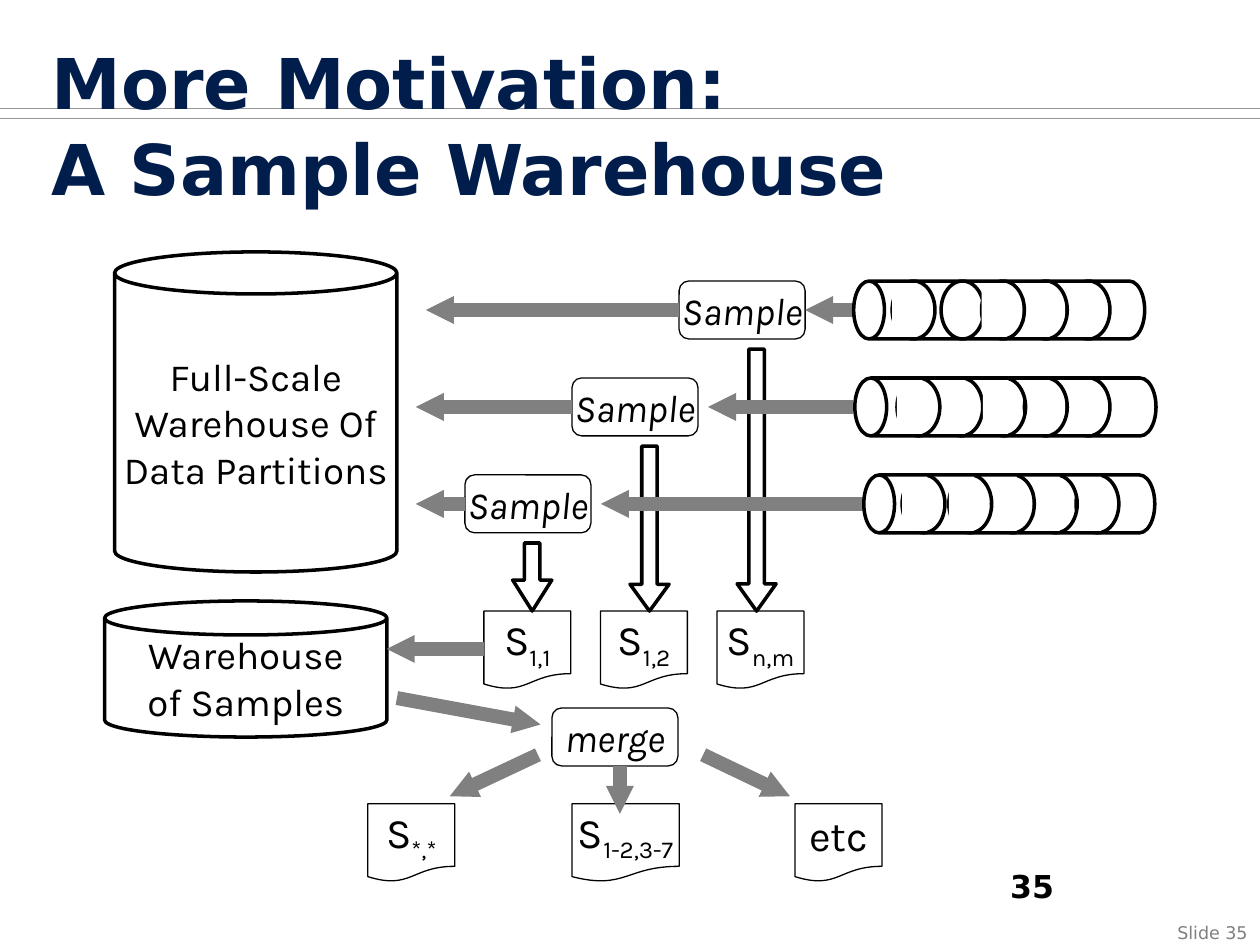
from lxml import etree
from pptx import Presentation
from pptx.dml.color import RGBColor
from pptx.enum.shapes import MSO_CONNECTOR, MSO_SHAPE
from pptx.enum.text import MSO_ANCHOR, PP_ALIGN
from pptx.oxml.ns import qn
from pptx.util import Pt

BLACK, GREY, WHITE = "000000", "808080", "FFFFFF"
BOX_W, BOX_H = 72, 33.1
DOC_W, DOC_H = 49.7, 44.6
ROW_PITCH = 55.4
DOC_TOP = 349.2
DISC_W, MASK_W = 24.5, 14.4


def color(hex_value):
    return RGBColor.from_string(hex_value)


def write(shape, text, sub="", size=22, font="Karla", ink=BLACK, bold=False,
          italic=False, align=PP_ALIGN.CENTER, anchor=MSO_ANCHOR.MIDDLE,
          wrap=False, spacing=None):
    """Fill a shape with one paragraph per line; sub is a closing subscript."""
    frame = shape.text_frame
    frame.word_wrap = wrap
    frame.vertical_anchor = anchor
    for i, line in enumerate(text.split("\n")):
        paragraph = frame.paragraphs[0] if i == 0 else frame.add_paragraph()
        paragraph.alignment = align
        paragraph.line_spacing = spacing
        for part in filter(None, (line, sub)):
            run = paragraph.add_run()
            run.text = part
            run.font.size = Pt(size)
            run.font.name = font
            run.font.bold = bold
            run.font.italic = italic
            run.font.color.rgb = color(ink)
            if part == sub:
                run._r.get_or_add_rPr().set("baseline", "-25000")


def add_label(slide, box, text, **style):
    label = slide.shapes.add_textbox(*map(Pt, box))
    write(label, text, font="DejaVu Sans", anchor=MSO_ANCHOR.TOP, **style)


def add_outline(slide, kind, box, weight=2, fill=None, adjust=(), rotation=0):
    """Add a black-outlined preset shape; weight 0 leaves the outline off."""
    shape = slide.shapes.add_shape(kind, *map(Pt, box))
    shape.shadow.inherit = False
    shape.rotation = rotation
    for i, value in enumerate(adjust):
        shape.adjustments[i] = value
    if fill:
        shape.fill.solid()
        shape.fill.fore_color.rgb = color(fill)
    else:
        shape.fill.background()
    if weight:
        shape.line.color.rgb = color(BLACK)
        shape.line.width = Pt(weight)
    else:
        shape.line.fill.background()
    return shape


def add_line(slide, start, end, ink=GREY, weight=8, arrow=True):
    line = slide.shapes.add_connector(MSO_CONNECTOR.STRAIGHT, *map(Pt, start + end))
    line.line.color.rgb = color(ink)
    line.line.width = Pt(weight)
    if arrow:
        etree.SubElement(line.line._get_or_add_ln(), qn("a:tailEnd"),
                         type="triangle", w="sm", len="sm")
    etree.SubElement(line._element.spPr, qn("a:effectLst"))


def add_step(slide, left, top, text):
    step = add_outline(slide, MSO_SHAPE.ROUNDED_RECTANGLE,
                       (left, top, BOX_W, BOX_H), weight=0.75)
    write(step, text, italic=True)


def add_document(slide, left, top, text, sub="", width=DOC_W):
    document = add_outline(slide, MSO_SHAPE.FLOWCHART_DOCUMENT,
                           (left, top, width, DOC_H), weight=0.75)
    write(document, text, sub, size=24)


def add_warehouse(slide, box, text, lid):
    write(add_outline(slide, MSO_SHAPE.CAN, box, adjust=[lid]), text)


def add_stream(slide, left, top, length, cap, discs, whole_disc=None):
    """Lying cylinder cut by discs, each half hidden except whole_disc."""
    for disc in discs:
        add_outline(slide, MSO_SHAPE.OVAL, (disc, top, DISC_W, BOX_H))
        if disc != whole_disc:
            add_outline(slide, MSO_SHAPE.RECTANGLE, (disc, top, MASK_W, BOX_H),
                        weight=0, fill=WHITE)
    upright = (left + (length - BOX_H) / 2, top + (BOX_H - length) / 2, BOX_H, length)
    add_outline(slide, MSO_SHAPE.CAN, upright, adjust=[cap], rotation=270)


def add_heading(slide, box):
    for y in (67.7, 61.9):
        add_line(slide, (0, y), (720, y), ink="969696", weight=0.5, arrow=False)
    add_label(slide, box, "More Motivation:\nA Sample Warehouse", size=40,
              ink="001D4B", bold=True, align=PP_ALIGN.LEFT, wrap=True, spacing=1.03)


def add_sampling(slide, left, top):
    """Rows of stream, sample step and warehouse arrow, with documents below."""
    # stream start, arrow end at the sample, arrow end at the warehouse,
    # down arrow left and head, document subscript
    rows = [(487.4, 460.1, 243.4, 421.2, 0.699, "n,m"),
            (487.4, 404.6, 237.6, 360, 0.687, "1,2"),
            (493.2, 343.4, 237.6, 293, 0.792, "1,1")]
    for i, (source, arrival, store, down, head, sub) in enumerate(rows):
        row_top = top + i * ROW_PITCH
        middle = row_top + BOX_H / 2
        step_left = left - i * 61.2
        down_top = row_top + BOX_H + 5.8
        add_outline(slide, MSO_SHAPE.DOWN_ARROW,
                    (down, down_top, 22.3, DOC_TOP - down_top), adjust=[0.396, head])
        add_step(slide, step_left, row_top, "Sample")
        add_line(slide, (source, middle), (arrival, middle))
        add_line(slide, (step_left, middle), (store, middle))
        add_document(slide, 409.7 - i * 66.6, DOC_TOP, "S", sub)


def add_streams(slide, top):
    streams = [(487.8, 166.3, 0.531, [537.8, 509.8, 609.8, 585.4, 560.9], 537.8),
               (488.5, 172.1, 0.549, [537.1, 512.6, 609.8, 585.4, 561.6], None),
               (493.6, 166.3, 0.531, [515.5, 614.9, 591.1, 566.6, 542.2], None)]
    for i, (left, length, cap, discs, whole_disc) in enumerate(streams):
        add_stream(slide, left, top + i * ROW_PITCH, length, cap, discs, whole_disc)


def add_merging(slide, left, top):
    add_line(slide, (276.5, 370.8), (221, 370.8))
    add_line(slide, (226.8, 398.9), (308.9, 414))
    add_step(slide, left, top, "merge")
    results_top = top + 54.7
    add_document(slide, 210.2, results_top, "S", "*,*")
    add_document(slide, 326.9, results_top, "S", "1-2,3-7", width=61.2)
    add_document(slide, 454.3, results_top, "etc")
    for start, end in [((307.4, 431.3), (257, 455)),
                       ((401.8, 431.3), (451.4, 455)),
                       ((354.2, 437.8), (354.2, 465.1))]:
        add_line(slide, start, end)


def main():
    deck = Presentation()
    deck.slide_width, deck.slide_height = Pt(720), Pt(540)
    slide = deck.slides.add_slide(deck.slide_layouts[6])
    add_label(slide, (635.8, 523.4, 84.2, 19.4), "Slide 35", size=10, ink=GREY,
              align=PP_ALIGN.RIGHT, wrap=True)
    add_heading(slide, (22.3, 17.5, 517.7, 103))
    add_label(slide, (570.2, 491.8, 149.8, 36), "35", size=18, bold=True,
              align=PP_ALIGN.LEFT, wrap=True)
    add_sampling(slide, 388.1, 160.6)
    add_streams(slide, 160.6)
    add_warehouse(slide, (65.5, 144, 161.3, 182.9),
                  "Full-Scale\nWarehouse Of\nData Partitions", 0.149)
    add_warehouse(slide, (59.8, 343.4, 161.3, 77.8), "Warehouse\nof Samples", 0.25)
    add_merging(slide, 315.4, 404.6)
    deck.save("out.pptx")


if __name__ == "__main__":
    main()
